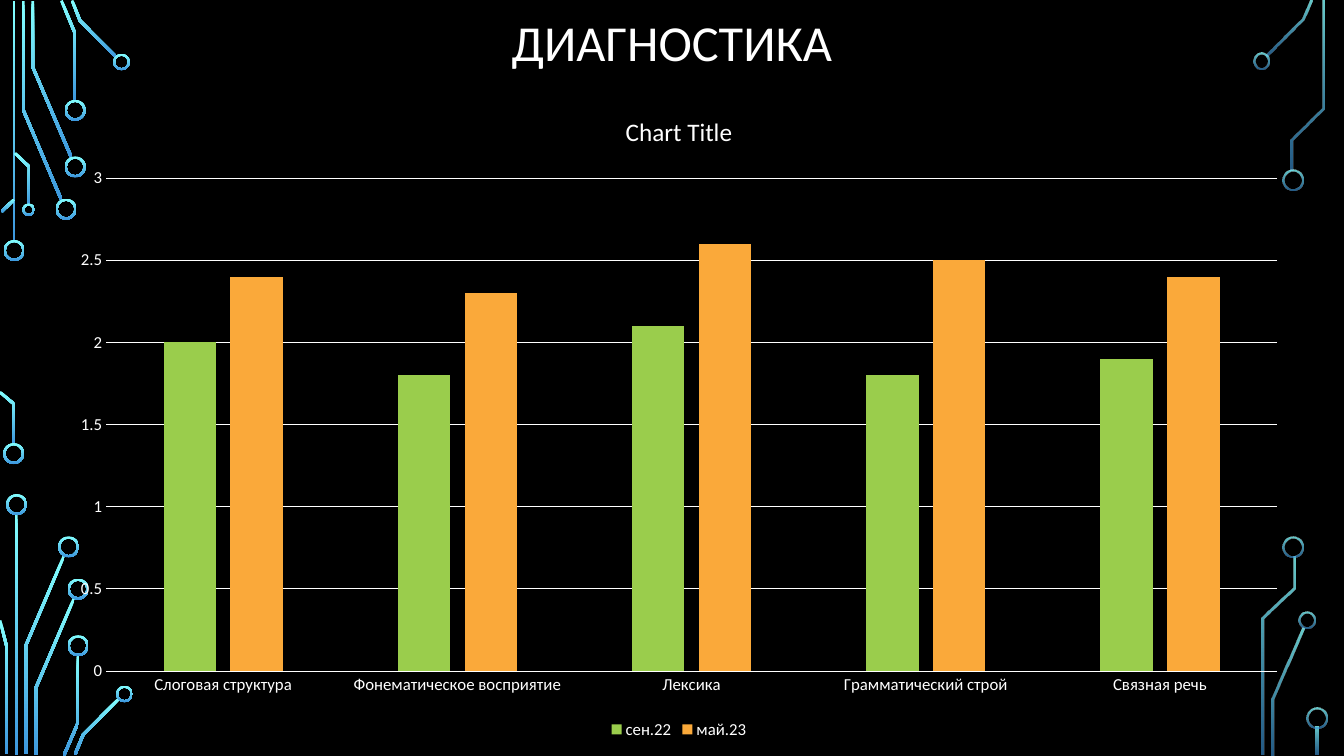
from math import hypot

from lxml import etree
from pptx import Presentation
from pptx.chart.data import CategoryChartData
from pptx.dml.color import RGBColor
from pptx.enum.chart import XL_CHART_TYPE, XL_LEGEND_POSITION, XL_TICK_MARK
from pptx.enum.shapes import MSO_SHAPE
from pptx.enum.text import MSO_ANCHOR, PP_ALIGN
from pptx.oxml.ns import qn
from pptx.util import Pt

COLUMNS = XL_CHART_TYPE.COLUMN_CLUSTERED
BOTTOM = XL_LEGEND_POSITION.BOTTOM
NO_TICK = XL_TICK_MARK.NONE
DONUT, RECTANGLE = MSO_SHAPE.DONUT, MSO_SHAPE.RECTANGLE
MIDDLE, CENTER = MSO_ANCHOR.MIDDLE, PP_ALIGN.CENTER

FONT = "Calibri"
COLORS = {
    "background": "000000",
    "text": "FFFFFF",
    "trace_top": "82FFFF",
    "trace_bottom": "3D97DE",
    "september": "9ACD4C",
    "may": "FAA93A",
}
TRACE_WIDTH = 2
RING_WIDTH = 1.5
FADED = (80, 60)

# Circuit parts in points: bars (left, top, height), rings (centre x, centre y,
# diameter) and traces (points of the centre line).
LEFT_BARS = [(9, 0.7, 172), (10.7, 367.2, 172)]
LEFT_RINGS = [
    (10.1, 178.9, 15), (9.8, 324, 15), (47.2, 149.4, 15), (53.7, 119.2, 15),
    (53.7, 78.8, 15), (11.9, 360.4, 15), (49, 390.6, 15), (55.8, 420.8, 15),
    (55.8, 461.2, 15), (86.8, 44.3, 12), (88.9, 495.7, 12), (20.5, 149.8, 9),
]
LEFT_TRACES = [
    [(43.9, 142.9), (16.6, 78.5), (16.6, 0.7)],
    [(51.1, 112.7), (23.4, 47.9), (23.4, 0.7)],
    [(53.6, 72), (53.6, 23.8), (43.9, 0.4)],
    [(83.2, 41), (57.2, 14.8), (51.5, 0.4)],
    [(1.1, 151.2), (10.1, 142.6)],
    [(10.1, 317.5), (10.1, 288.7), (0, 280.1)],
    [(20.9, 146.2), (20.9, 119.2), (10.8, 109.4)],
    [(18.4, 538.6), (18.4, 461.2), (45.7, 397.1)],
    [(4.7, 538.6), (4.7, 461.5), (0, 443.2)],
    [(25.6, 539.3), (25.6, 491.4), (52.9, 427.3)],
    [(45.7, 539.6), (55.8, 516.2), (55.8, 468)],
    [(53.6, 538.9), (59.4, 524.9), (85, 499)],
]
RIGHT_BARS = [(940, 519.2, 20)]
RIGHT_RINGS = [
    (923.4, 128.5, 15), (923.8, 390.6, 15), (940.7, 512.6, 15),
    (901.1, 43.6, 12), (933.5, 443.2, 12),
]
RIGHT_TRACES = [
    [(905, 40), (930.6, 14), (936.4, 0.4)],
    [(909, 539.3), (909, 499.3), (931, 448.9)],
    [(923, 121.7), (923, 99.7), (945, 77.4), (945, 0.7)],
    [(901.8, 539.3), (901.8, 441.7), (924.1, 420.1), (924.1, 397.4)],
]

CATEGORIES = ["Слоговая структура", "Фонематическое восприятие", "Лексика",
              "Грамматический строй", "Связная речь"]
SERIES = [
    ("сен.22", [2, 1.8, 2.1, 1.8, 1.9], "september"),
    ("май.23", [2.4, 2.3, 2.6, 2.5, 2.4], "may"),
]


def rgb(name):
    return RGBColor.from_string(COLORS[name])


def style_font(font, size):
    font.name = FONT
    font.size = Pt(size)
    font.bold = False
    font.color.rgb = rgb("text")


def style_circuit(shape, opacities):
    """Fill from light at the top to blue at the bottom, with percent opacities."""
    shape.shadow.inherit = False
    shape.line.fill.background()
    shape.fill.gradient()
    shape.fill.gradient_angle = 270
    for stop, name in zip(shape.fill.gradient_stops, ("trace_top", "trace_bottom")):
        stop.color.rgb = rgb(name)
    if opacities:
        for color, opacity in zip(shape._element.spPr.iter(qn("a:srgbClr")), opacities):
            etree.SubElement(color, qn("a:alpha")).set("val", str(opacity * 1000))


def offset_line(points, distance):
    """Shift a polyline sideways, with mitred corners."""
    normals = []
    for (x1, y1), (x2, y2) in zip(points, points[1:]):
        length = hypot(x2 - x1, y2 - y1)
        normals.append(((y1 - y2) / length, (x2 - x1) / length))
    befores, afters = [normals[0]] + normals, normals + [normals[-1]]
    shifted = []
    for (x, y), before, after in zip(points, befores, afters):
        scale = distance / (1 + before[0] * after[0] + before[1] * after[1])
        shifted.append((x + scale * (before[0] + after[0]),
                        y + scale * (before[1] + after[1])))
    return shifted


def add_trace(slide, points, opacities):
    half = TRACE_WIDTH / 2
    outline = offset_line(points, half) + offset_line(points, -half)[::-1]
    corners = [(Pt(x), Pt(y)) for x, y in outline]
    builder = slide.shapes.build_freeform(*corners[0])
    builder.add_line_segments(corners[1:], close=True)
    style_circuit(builder.convert_to_shape(), opacities)


def add_ring(slide, x, y, diameter, opacities):
    shape = slide.shapes.add_shape(DONUT, Pt(x - diameter / 2), Pt(y - diameter / 2),
                                   Pt(diameter), Pt(diameter))
    shape.adjustments[0] = RING_WIDTH / diameter
    style_circuit(shape, opacities)


def add_circuit(slide, bars, rings, traces, opacities=None):
    for left, top, height in bars:
        bar = slide.shapes.add_shape(RECTANGLE, Pt(left), Pt(top),
                                     Pt(TRACE_WIDTH), Pt(height))
        style_circuit(bar, opacities)
    for points in traces:
        add_trace(slide, points, opacities)
    for x, y, diameter in rings:
        add_ring(slide, x, y, diameter, opacities)


def set_title(slide, text):
    title = slide.shapes.title
    title.left, title.top, title.width, title.height = Pt(90), Pt(0), Pt(780), Pt(65)
    title.text_frame.vertical_anchor = MIDDLE
    paragraph = title.text_frame.paragraphs[0]
    paragraph.alignment = CENTER
    paragraph.line_spacing = 0.9
    run = paragraph.add_run()
    run.text = text
    style_font(run.font, 36)


def style_line(line):
    line.color.rgb = rgb("text")
    line.width = Pt(0.75)


def style_axes(chart):
    for axis in (chart.category_axis, chart.value_axis):
        axis.major_tick_mark = axis.minor_tick_mark = NO_TICK
        style_font(axis.tick_labels.font, 12)
    style_line(chart.category_axis.format.line)
    values = chart.value_axis
    values.minimum_scale, values.maximum_scale, values.major_unit = 0, 3, 0.5
    values.format.line.fill.background()
    style_line(values.major_gridlines.format.line)


def add_results_chart(slide):
    data = CategoryChartData()
    data.categories = CATEGORIES
    for name, values, _ in SERIES:
        data.add_series(name, values)
    chart = slide.shapes.add_chart(COLUMNS, Pt(40), Pt(65), Pt(890), Pt(466), data).chart
    style_font(chart.font, 10)
    chart.has_title = True
    run = chart.chart_title.text_frame.paragraphs[0].add_run()
    run.text = "Chart Title"
    style_font(run.font, 18)
    chart.chart_title.include_in_layout = False
    style_axes(chart)
    chart.has_legend = True
    chart.legend.position = BOTTOM
    chart.legend.include_in_layout = False
    style_font(chart.legend.font, 12)
    plot = chart.plots[0]
    plot.vary_by_categories = False
    plot.gap_width, plot.overlap = 219, -27
    for series, (_, _, color) in zip(plot.series, SERIES):
        series.format.fill.solid()
        series.format.fill.fore_color.rgb = rgb(color)


def main():
    presentation = Presentation()
    presentation.slide_width, presentation.slide_height = Pt(960), Pt(540)
    slide = presentation.slides.add_slide(presentation.slide_layouts[5])
    slide.background.fill.solid()
    slide.background.fill.fore_color.rgb = rgb("background")
    add_circuit(slide, LEFT_BARS, LEFT_RINGS, LEFT_TRACES)
    add_circuit(slide, RIGHT_BARS, RIGHT_RINGS, RIGHT_TRACES, FADED)
    set_title(slide, "ДИАГНОСТИКА")
    add_results_chart(slide)
    presentation.save("out.pptx")


if __name__ == "__main__":
    main()
